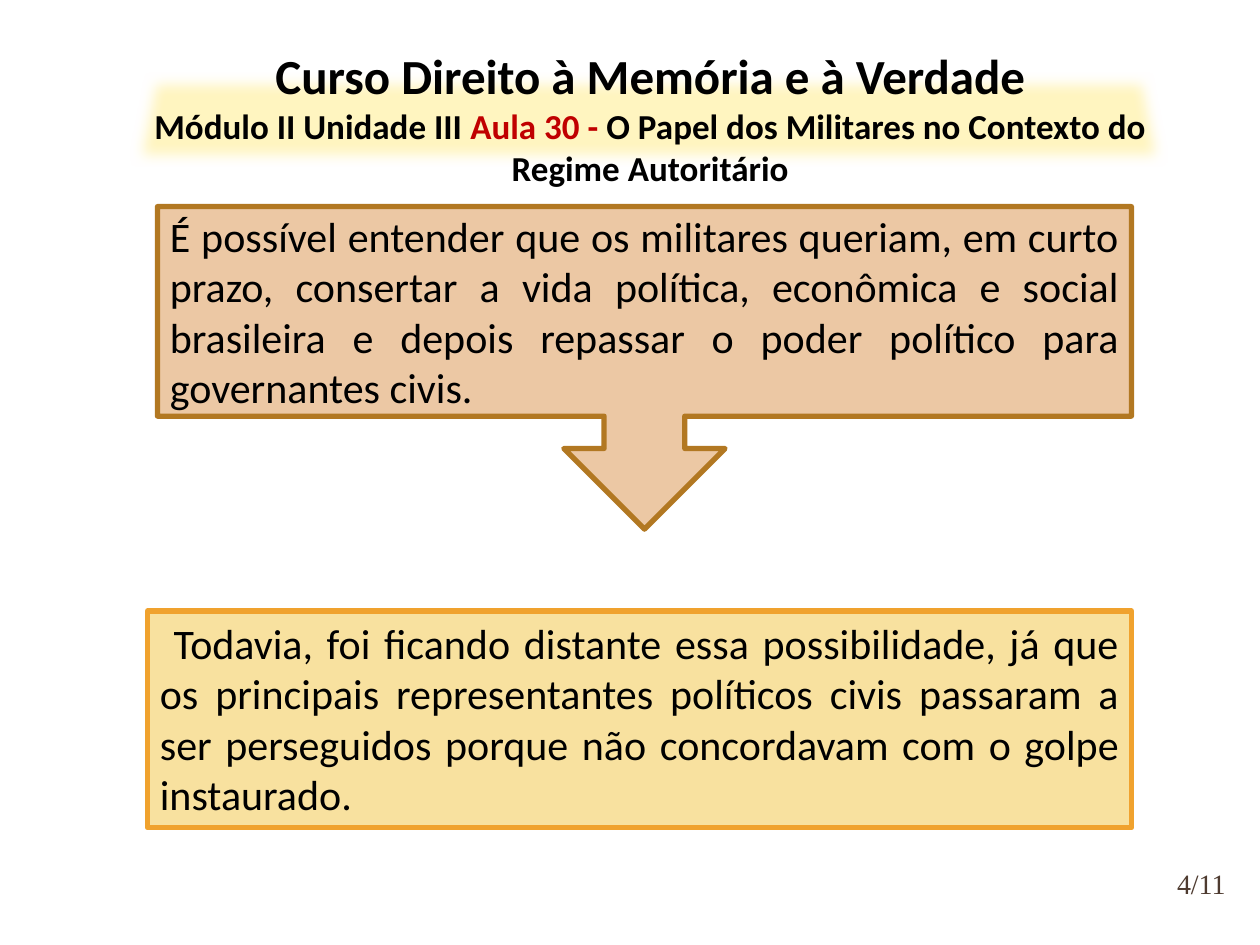
from dataclasses import dataclass

from lxml import etree
from pptx import Presentation
from pptx.dml.color import RGBColor
from pptx.enum.shapes import MSO_SHAPE
from pptx.enum.text import MSO_ANCHOR, PP_ALIGN
from pptx.oxml.ns import qn
from pptx.util import Inches, Pt

RECT = MSO_SHAPE.RECTANGLE
CALLOUT = MSO_SHAPE.DOWN_ARROW_CALLOUT
TRAPEZOID = MSO_SHAPE.TRAPEZOID
TOP, MIDDLE = MSO_ANCHOR.TOP, MSO_ANCHOR.MIDDLE
CENTER, JUSTIFY = PP_ALIGN.CENTER, PP_ALIGN.JUSTIFY

COLORS = {
    "black": "000000",
    "red": "C00000",
    "brown": "4E3B30",
    "glow": "FFF5C0",
    "sand": "F8E19F",
    "orange": "F0A22E",
    "peach": "ECC8A4",
    "bronze": "B27822",
}


@dataclass
class Panel:
    kind: int
    box: tuple[float, float, float, float]
    fill: str
    line: str
    anchor: int
    text: str


PANELS = [
    Panel(RECT, (1.17, 4.85, 7.81, 1.72), "sand", "orange", TOP,
          " Todavia, foi ficando distante essa possibilidade, já que os "
          "principais representantes políticos civis passaram a ser perseguidos "
          "porque não concordavam com o golpe instaurado."),
    Panel(CALLOUT, (1.25, 1.64, 7.73, 2.56), "peach", "bronze", MIDDLE,
          "É possível entender que os militares queriam, em curto prazo, "
          "consertar a vida política, econômica e social brasileira e depois "
          "repassar o poder político para governantes civis."),
]


def rgb(name: str) -> RGBColor:
    return RGBColor.from_string(COLORS[name])


def add_run(p, text: str, *, size: int = 24, color: str = "black",
            font: str = "Calibri", bold: bool = False) -> None:
    r = p.add_run()
    r.text = text
    r.font.size = Pt(size)
    r.font.name = font
    r.font.bold = bold
    r.font.color.rgb = rgb(color)


def add_filled(s, kind: int, box: tuple, fill: str):
    sp = s.shapes.add_shape(kind, *map(Inches, box))
    sp.shadow.inherit = False
    sp.fill.solid()
    sp.fill.fore_color.rgb = rgb(fill)
    sp.line.fill.background()
    return sp


def add_panel(s, panel: Panel) -> None:
    sp = add_filled(s, panel.kind, panel.box, panel.fill)
    sp.line.color.rgb = rgb(panel.line)
    sp.line.width = Pt(3)
    tf = sp.text_frame
    tf.word_wrap = True
    tf.vertical_anchor = panel.anchor
    p = tf.paragraphs[0]
    p.alignment = JUSTIFY
    add_run(p, panel.text)


def add_glow(s) -> None:
    """Draw the soft-edged yellow band behind the title."""
    sp = add_filled(s, TRAPEZOID, (1, 0.58, 8.3, 0.74), "glow")
    sp.adjustments[0] = 0.2
    effects = sp._element.spPr.find(qn("a:effectLst"))
    etree.SubElement(effects, qn("a:softEdge"), rad=str(Inches(0.1)))


def add_title(s) -> None:
    tf = s.shapes.add_textbox(*map(Inches, (1.02, 0.31, 8.28, 1.25))).text_frame
    tf.word_wrap = True
    p = tf.paragraphs[0]
    p.alignment = CENTER
    add_run(p, "Curso Direito à Memória e à Verdade", size=28, bold=True)
    p = tf.add_paragraph()
    p.alignment = CENTER
    for text, color in (
        ("Módulo II Unidade III ", "black"),
        ("Aula 30 - ", "red"),
        ("O Papel dos Militares no Contexto do Regime Autoritário", "black"),
    ):
        add_run(p, text, size=20, color=color, bold=True)


def add_page_number(s) -> None:
    tf = s.shapes.add_textbox(*map(Inches, (9.2, 6.76, 0.67, 0.5))).text_frame
    tf.margin_left = tf.margin_right = tf.margin_top = tf.margin_bottom = 0
    tf.word_wrap = True
    tf.vertical_anchor = MIDDLE
    p = tf.paragraphs[0]
    p.alignment = CENTER
    add_run(p, "4/11", size=16, color="brown", font="Times New Roman")


def main() -> None:
    prs = Presentation()
    prs.slide_width, prs.slide_height = Inches(10), Inches(7.5)
    s = prs.slides.add_slide(prs.slide_layouts[6])
    add_page_number(s)
    for panel in PANELS:
        add_panel(s, panel)
    add_glow(s)
    add_title(s)
    prs.save("out.pptx")


if __name__ == "__main__":
    main()
